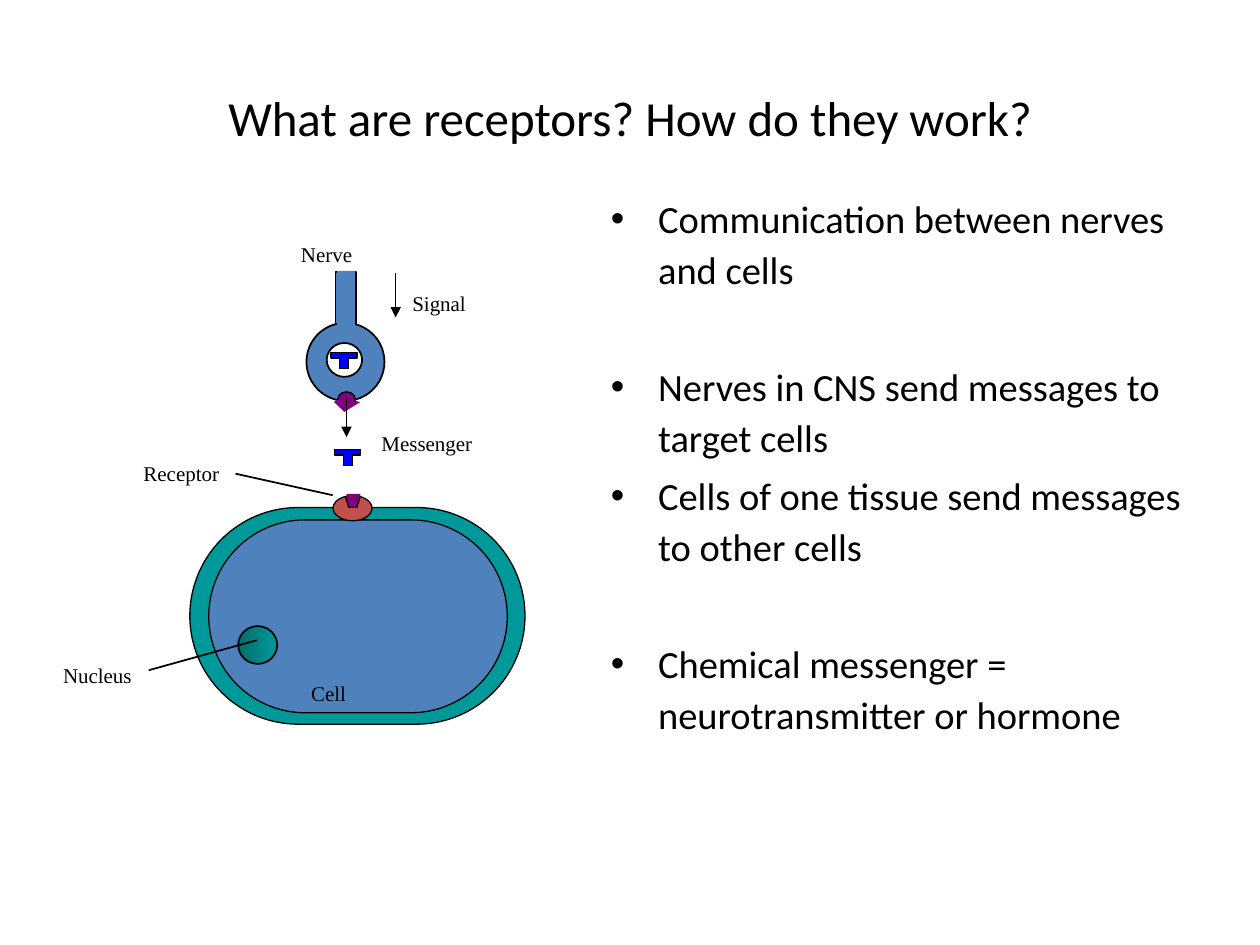
from lxml import etree
from pptx import Presentation
from pptx.dml.color import RGBColor
from pptx.enum.shapes import MSO_CONNECTOR, MSO_SHAPE
from pptx.enum.text import MSO_ANCHOR, PP_ALIGN
from pptx.oxml.ns import qn
from pptx.util import Pt

BLACK = RGBColor(0x00, 0x00, 0x00)
WHITE = RGBColor(0xFF, 0xFF, 0xFF)
BLUE = RGBColor(0x4F, 0x81, 0xBD)
BRIGHT = RGBColor(0x00, 0x00, 0xFF)
TEAL = RGBColor(0x00, 0x99, 0x99)
DEEP = RGBColor(0x00, 0x6D, 0x6D)
RED = RGBColor(0xC0, 0x50, 0x4D)
PURPLE = RGBColor(0x80, 0x00, 0x80)

RECT = MSO_SHAPE.RECTANGLE
ROUND = MSO_SHAPE.ROUNDED_RECTANGLE
OVAL = MSO_SHAPE.OVAL
STRAIGHT = MSO_CONNECTOR.STRAIGHT
CENTER = PP_ALIGN.CENTER
MIDDLE = MSO_ANCHOR.MIDDLE

SANS = "Calibri"
SERIF = "Times New Roman"
THIN = 0.75

# Text and space before, in points; a wide space parts the topics
TIGHT, WIDE = 4.4, 38
POINTS = [
    ("Communication between nerves and cells", TIGHT),
    ("Nerves in CNS send messages to target cells", WIDE),
    ("Cells of one tissue send messages to other cells", TIGHT),
    ("Chemical messenger = neurotransmitter or hormone", WIDE),
]
# Text, left, top and width, with a little slack in each width
LABELS = [
    ("Receptor", 82, 263.2, 47),
    ("Nerve", 172, 138.2, 33),
    ("Nucleus", 36, 378.7, 43),
    ("Cell", 177.8, 388.8, 24),
    ("Messenger", 218, 246.2, 56),
    ("Signal", 235.6, 166, 35),
]


def set_font(para, name, size):
    para.font.name = name
    para.font.size = Pt(size)
    para.font.color.rgb = BLACK


def add_box(slide, left, top, width, height, wrap=True):
    box = slide.shapes.add_textbox(Pt(left), Pt(top), Pt(width), Pt(height))
    box.text_frame.word_wrap = wrap
    return box.text_frame


def add_title(slide, text):
    frame = add_box(slide, 36, 21.6, 648, 90)
    frame.vertical_anchor = MIDDLE
    para = frame.paragraphs[0]
    para.text = text
    para.alignment = CENTER
    set_font(para, SANS, 28)


def add_list(slide):
    frame = add_box(slide, 342, 105.1, 354.2, 356.4)
    for i, (text, space) in enumerate(POINTS):
        para = frame.add_paragraph() if i else frame.paragraphs[0]
        para.text = text
        para.line_spacing = 1.1
        para.space_before = Pt(space)
        props = para._p.get_or_add_pPr()
        props.set("marL", str(Pt(27)))
        props.set("indent", str(Pt(-27)))
        etree.SubElement(props, qn("a:buFont")).set("typeface", "Arial")
        etree.SubElement(props, qn("a:buChar")).set("char", "•")
        set_font(para, SANS, 22)


def add_label(slide, text, left, top, width):
    frame = add_box(slide, left, top, width, 14.4, wrap=False)
    frame.margin_left = frame.margin_right = 0
    frame.margin_top = frame.margin_bottom = 0
    para = frame.paragraphs[0]
    para.text = text
    set_font(para, SERIF, 12)


def paint(shape, fill, line):
    shape.shadow.inherit = False
    shape.fill.solid()
    shape.fill.fore_color.rgb = fill
    if line:
        shape.line.color.rgb = BLACK
        shape.line.width = Pt(line)
    else:
        shape.line.fill.background()
    return shape


def add_form(slide, kind, left, top, width, height, fill, line=0):
    shape = slide.shapes.add_shape(
        kind, Pt(left), Pt(top), Pt(width), Pt(height))
    if kind == ROUND:
        shape.adjustments[0] = 0.5
    return paint(shape, fill, line)


def add_free(slide, dots, fill, line=0):
    first, *rest = [(Pt(x), Pt(y)) for x, y in dots]
    pen = slide.shapes.build_freeform(*first)
    pen.add_line_segments(rest, close=True)
    return paint(pen.convert_to_shape(), fill, line)


def add_line(slide, start, end, width=THIN, arrow=False):
    ends = [Pt(v) for v in (*start, *end)]
    line = slide.shapes.add_connector(STRAIGHT, *ends)
    line.line.color.rgb = BLACK
    line.line.width = Pt(width)
    if arrow:
        tail = etree.SubElement(line.line._get_or_add_ln(), qn("a:tailEnd"))
        tail.set("type", "triangle")
    etree.SubElement(line._element.spPr, qn("a:effectLst"))


def add_tee(slide, left, top):
    dots = [(0, 0), (14.8, 0), (14.8, 3), (10, 3),
            (10, 9), (5, 9), (5, 3), (0, 3)]
    add_free(slide, [(left + x, top + y) for x, y in dots], BRIGHT, THIN)


def add_cell(slide):
    # Membrane and body
    add_form(slide, ROUND, 108.5, 290, 191.5, 123.8, TEAL, THIN)
    add_form(slide, ROUND, 119.3, 297.1, 170.6, 110.2, BLUE, THIN)
    # Receptor with its open notch
    add_form(slide, OVAL, 190.3, 283.2, 22.3, 14.4, RED, THIN)
    notch = [(197.3, 283.7), (199.4, 290.2), (203.8, 290.2), (205.9, 283.7)]
    add_free(slide, notch, PURPLE)
    for start, end in zip(notch, notch[1:]):
        add_line(slide, start, end)
    add_form(slide, RECT, 198, 282.2, 7.9, 1.4, PURPLE)
    # Nucleus
    core = add_form(slide, OVAL, 136.1, 357.8, 22.3, 21.6, TEAL, 1)
    core.fill.gradient()
    core.fill.gradient_angle = 0
    for stop, color in zip(core.fill.gradient_stops, (DEEP, TEAL)):
        stop.color.rgb = color


def add_nerve(slide):
    # Stem and bulb
    add_form(slide, RECT, 191.9, 155.5, 11.5, 31, BLUE, THIN)
    add_form(slide, OVAL, 175.1, 184.5, 44.6, 44.6, BLUE, 1)
    # Vesicle holding a messenger
    add_form(slide, OVAL, 186.7, 196, 20.2, 19.4, WHITE, 1)
    add_tee(slide, 189.2, 201.6)
    # Release port
    add_form(slide, OVAL, 193, 223.9, 10.1, 8.6, PURPLE, THIN)
    add_free(slide, [(190.8, 229.7), (194.4, 227.5), (201.6, 226.8),
                     (202.3, 229), (205.9, 229.7), (196.8, 235.4)], PURPLE)
    # Open both ends of the stem
    for top in (180, 154.8):
        add_form(slide, RECT, 192.7, top, 10.1, 8.6, BLUE)


def main():
    deck = Presentation()
    deck.slide_width, deck.slide_height = Pt(720), Pt(540)
    slide = deck.slides.add_slide(deck.slide_layouts[6])
    add_title(slide, "What are receptors? How do they work?")
    add_list(slide)
    add_cell(slide)
    add_nerve(slide)
    # Free messenger
    add_tee(slide, 191.3, 257)
    # Leaders, then arrows
    add_line(slide, (85, 383), (146.9, 365.8), 1)
    add_line(slide, (134.6, 270.7), (190.1, 283), 1)
    add_line(slide, (198, 227.5), (198, 249.8), arrow=True)
    add_line(slide, (226.1, 156.2), (226.1, 181.4), arrow=True)
    for label in LABELS:
        add_label(slide, *label)
    deck.save("out.pptx")


if __name__ == "__main__":
    main()
